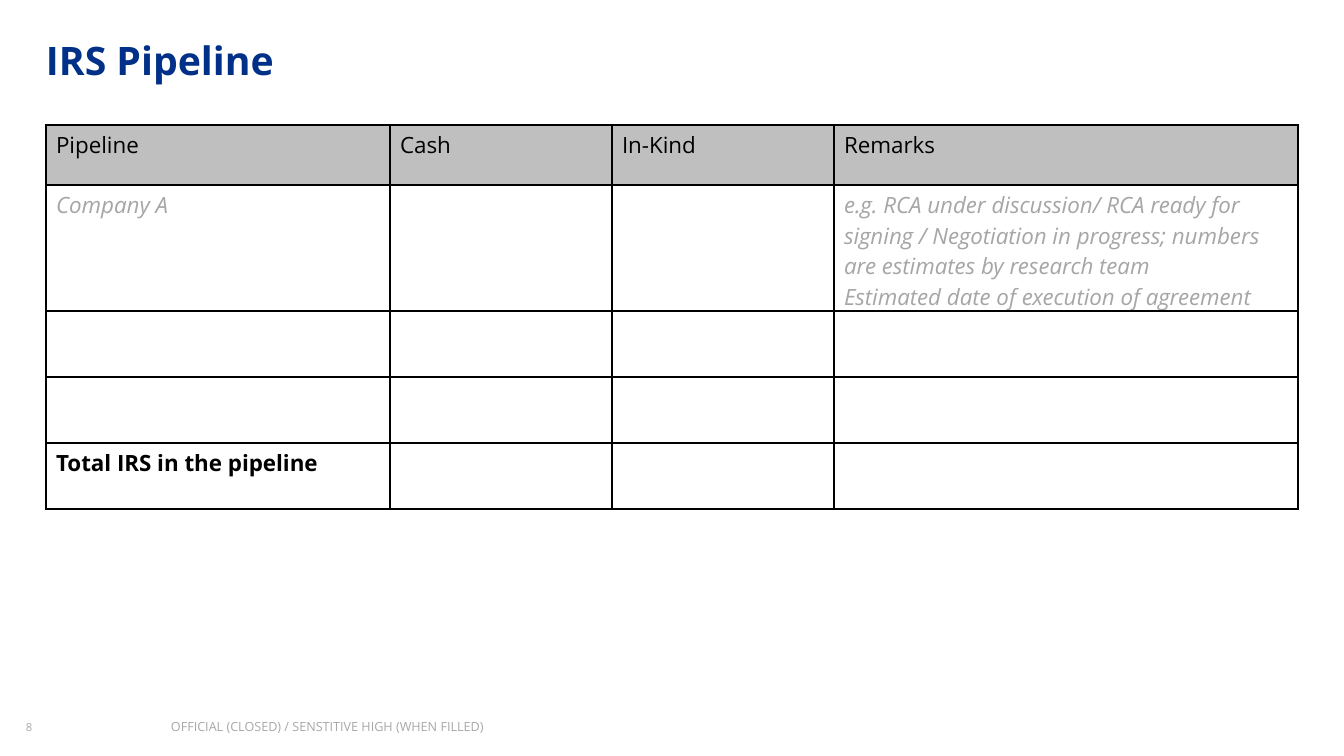
from lxml.etree import SubElement
from pptx import Presentation
from pptx.dml.color import RGBColor
from pptx.enum.text import MSO_ANCHOR as Anchor
from pptx.oxml.ns import qn
from pptx.util import Pt

PX = 914400 / 100.8
FONT = "Open Sans"
NAVY = RGBColor(0x00, 0x30, 0x87)
BLACK = RGBColor(0x00, 0x00, 0x00)
HEADER_GREY = RGBColor(0xBF, 0xBF, 0xBF)
HINT_GREY = RGBColor(0xA6, 0xA6, 0xA6)
FOOTER_GREY = RGBColor(0x76, 0x71, 0x71)

COLUMNS = [344, 222, 222, 464]
ROWS = [60, 126, 66, 66, 66]
HEADINGS = ["Pipeline", "Cash", "In-Kind", "Remarks"]
REMARKS = [
    "e.g. RCA under discussion/ RCA ready for signing / Negotiation in progress; "
    "numbers are estimates by research team",
    "Estimated date of execution of agreement",
]
ENTRIES = [
    [[heading] for heading in HEADINGS],
    [["Company A"], [], [], REMARKS],
    [[]] * 4,
    [[]] * 4,
    [["Total IRS in the pipeline"], [], [], []],
]


def px(length):
    return round(length * PX)


def style(font, size, color, bold=False, italic=False):
    font.name, font.size = FONT, Pt(size)
    font.bold, font.italic = bold, italic
    font.color.rgb = color


def add_line(slide, box, text, size, color, bold=False, spacing=1.0, anchor=Anchor.TOP):
    """Add a one-line text box without margins and return its run."""
    frame = slide.shapes.add_textbox(*map(px, box)).text_frame
    frame.margin_left = frame.margin_top = frame.margin_right = frame.margin_bottom = 0
    frame.word_wrap = True
    frame.vertical_anchor = anchor
    paragraph = frame.paragraphs[0]
    paragraph.line_spacing = spacing
    run = paragraph.add_run()
    run.text = text
    style(run.font, size, color, bold)
    return run


def add_title(slide, box):
    add_line(slide, box, "IRS Pipeline", 28, NAVY, True, 1.1, Anchor.MIDDLE)


def add_footer(slide, left, top):
    number = add_line(slide, (left, top, 80, 19), "8", 8, FOOTER_GREY, spacing=1.1)
    marking = add_line(slide, (left + 145, top, 537, 19),
                       "OFFICIAL (CLOSED) / SENSTITIVE HIGH (WHEN FILLED)", 9, FOOTER_GREY)
    for run in (number, marking):
        tint = run.font.fill._xPr.find(".//" + qn("a:srgbClr"))
        SubElement(tint, qn("a:alpha"), val="61000")


def draw_borders(cell):
    properties = cell._tc.get_or_add_tcPr()
    for index, side in enumerate(("lnL", "lnR", "lnT", "lnB")):
        line = properties.makeelement(qn("a:" + side), {"w": str(Pt(1))})
        properties.insert(index, line)
        solid = SubElement(line, qn("a:solidFill"))
        SubElement(solid, qn("a:srgbClr"), val=str(BLACK))


def fill_cell(cell, lines, is_header, is_hint, is_total):
    if is_header:
        cell.fill.solid()
        cell.fill.fore_color.rgb = HEADER_GREY
    else:
        cell.fill.background()
    draw_borders(cell)
    frame = cell.text_frame
    frame.paragraphs[0].font.size = Pt(16)
    for index, line in enumerate(lines):
        paragraph = frame.add_paragraph() if index else frame.paragraphs[0]
        run = paragraph.add_run()
        run.text = line
        style(run.font, 16, HINT_GREY if is_hint else BLACK, is_total, is_hint)


def add_pipeline_table(slide, left, top):
    table = slide.shapes.add_table(len(ROWS), len(COLUMNS), px(left), px(top),
                                   px(sum(COLUMNS)), px(sum(ROWS))).table
    table.horz_banding = False
    table.first_row = False
    for column, width in zip(table.columns, COLUMNS):
        column.width = px(width)
    for r, (row, height) in enumerate(zip(table.rows, ROWS)):
        row.height = px(height)
        for cell, lines in zip(row.cells, ENTRIES[r]):
            fill_cell(cell, lines, r == 0, r == 1, r == len(ROWS) - 1)


def main():
    deck = Presentation()
    deck.slide_width, deck.slide_height = px(1344), px(756)
    slide = deck.slides.add_slide(deck.slide_layouts[6])
    add_title(slide, (46, 32, 1111, 52))
    add_pipeline_table(slide, 46, 125)
    add_footer(slide, 26, 719)
    deck.save("out.pptx")


if __name__ == "__main__":
    main()
